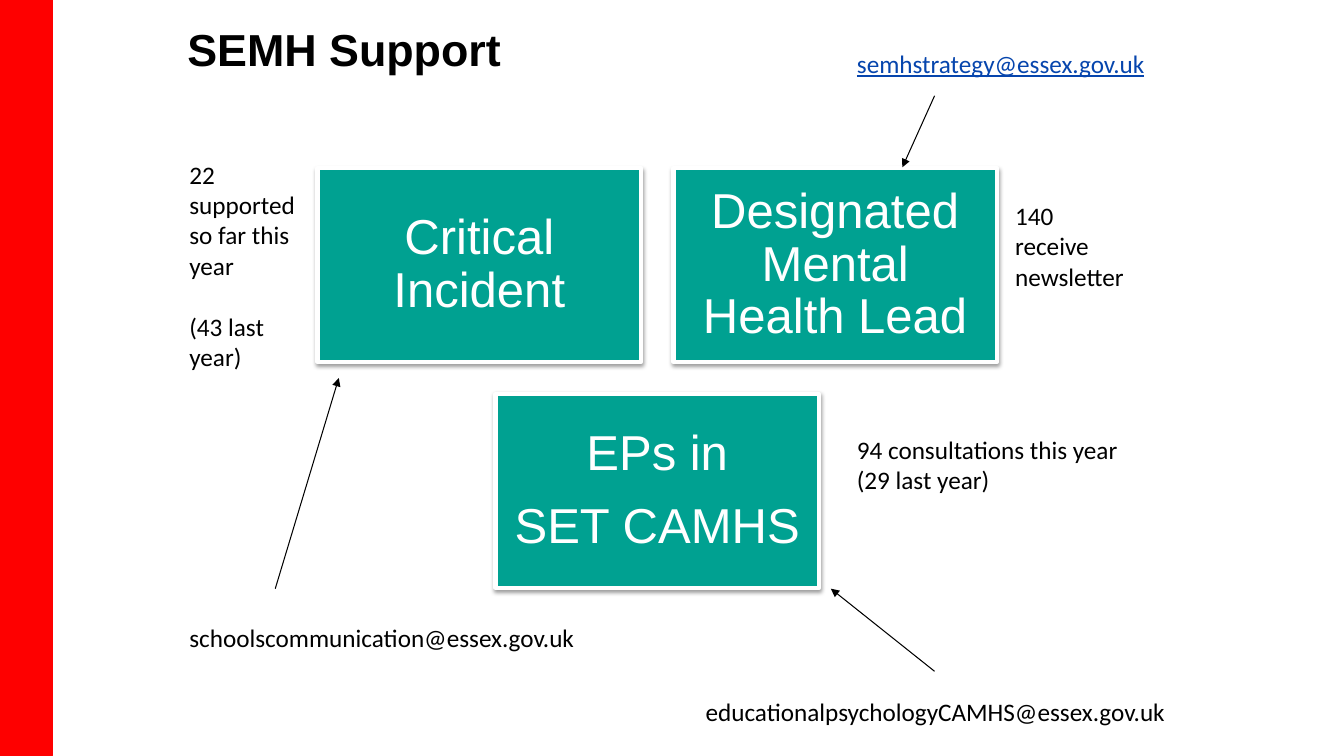
"""Build the SEMH Support slide: three service cards with contacts and figures."""
from dataclasses import dataclass

from lxml.etree import SubElement
from pptx import Presentation
from pptx.dml.color import RGBColor
from pptx.enum.shapes import MSO_CONNECTOR as Connector, MSO_SHAPE as Preset
from pptx.enum.text import MSO_ANCHOR as Anchor, PP_ALIGN as Align
from pptx.oxml.ns import qn
from pptx.util import Inches, Pt

BLACK = RGBColor(0x00, 0x00, 0x00)
WHITE = RGBColor(0xFF, 0xFF, 0xFF)
TEAL = RGBColor(0x00, 0xA1, 0x91)
RED = RGBColor(0xFE, 0x00, 0x00)
LINK_BLUE = RGBColor(0x06, 0x45, 0xAD)

WIDTH, HEIGHT = Inches(13.33), Inches(7.5)
CARD_LEFT, CARD_TOP = 23.63, 22.27
CARD_WIDTH, CARD_HEIGHT = 24.08, 25.6
COLUMN_PITCH, ROW_PITCH = 26.48, 29.87


@dataclass(frozen=True)
class Area:
    """A rectangle in percent of the slide's width and height."""
    left: float
    top: float
    width: float
    height: float

    def lengths(self) -> tuple:
        """Return left, top, width and height as slide lengths."""
        return across(self.left), down(self.top), across(self.width), down(self.height)


@dataclass(frozen=True)
class Card:
    """A service card placed by grid column and row."""
    column: float
    row: int
    lines: tuple


@dataclass(frozen=True)
class Label:
    """A text box, one paragraph per line."""
    area: Area
    lines: tuple
    font: str = "Calibri"
    size: int = 18
    color: RGBColor = BLACK
    bold: bool = False
    underline: bool = False
    anchor: Anchor = Anchor.TOP


@dataclass(frozen=True)
class Arrow:
    """An arrow between two points in percent of the slide."""
    start: tuple
    end: tuple


CARDS = (
    Card(0, 0, ("Critical Incident",)),
    Card(1, 0, ("Designated Mental Health Lead",)),
    Card(0.5, 1, ("EPs in", "SET CAMHS")),
)
LABELS = (
    Label(Area(13.2, 1.73, 67.44, 9.47), ("SEMH Support",), "Arial", 32,
          bold=True, anchor=Anchor.MIDDLE),
    Label(Area(51.76, 91.47, 41.34, 5.33), ("educationalpsychologyCAMHS@essex.gov.uk",)),
    Label(Area(13.35, 81.6, 32.78, 5.33), ("schoolscommunication@essex.gov.uk",)),
    Label(Area(63.02, 5.73, 41.34, 5.33), ("semhstrategy@essex.gov.uk",),
          color=LINK_BLUE, underline=True),
    Label(Area(13.35, 20.4, 10.05, 29.6),
          ("22 supported so far this year", "(43 last year)")),
    Label(Area(63.02, 56.8, 21.91, 21.6), ("94 consultations this year (29 last year)",)),
    Label(Area(74.79, 25.87, 10.05, 13.47), ("140 receive newsletter",)),
)
ARROWS = (
    Arrow((20.48, 77.87), (25.21, 50)),
    Arrow((69.54, 88.8), (61.82, 77.87)),
    Arrow((69.54, 12.67), (67.14, 22.13)),
)


def across(share: float) -> int:
    """Turn a percentage of the slide's width into a length."""
    return round(WIDTH * share / 100)


def down(share: float) -> int:
    """Turn a percentage of the slide's height into a length."""
    return round(HEIGHT * share / 100)


def add_paragraph(frame, index: int, text: str, font: str, size: int, color: RGBColor):
    """Write one paragraph with a single run and return both."""
    paragraph = frame.add_paragraph() if index else frame.paragraphs[0]
    run = paragraph.add_run()
    run.text = text
    run.font.name, run.font.size = font, Pt(size)
    run.font.color.rgb = color
    return paragraph, run


def add_rectangle(slide, area: Area, fill: RGBColor, line: RGBColor, weight: float):
    """Draw a plain rectangle."""
    shape = slide.shapes.add_shape(Preset.RECTANGLE, *area.lengths())
    shape.shadow.inherit = False
    shape.fill.solid()
    shape.fill.fore_color.rgb = fill
    shape.line.color.rgb = line
    shape.line.width = Pt(weight)
    return shape


def add_card(slide, card: Card) -> None:
    """Draw a service card with its soft shadow."""
    area = Area(CARD_LEFT + card.column * COLUMN_PITCH, CARD_TOP + card.row * ROW_PITCH,
                CARD_WIDTH, CARD_HEIGHT)
    shape = add_rectangle(slide, area, TEAL, WHITE, 3)
    effects = shape._element.spPr.find(qn("a:effectLst"))
    shadow = SubElement(effects, qn("a:outerShdw"), blurRad=str(Pt(3.1)),
                        dist=str(Pt(1.6)), dir="5400000", rotWithShape="0")
    color = SubElement(shadow, qn("a:srgbClr"), val=str(BLACK))
    SubElement(color, qn("a:alpha"), val="38000")
    frame = shape.text_frame
    frame.word_wrap = True
    frame.vertical_anchor = Anchor.MIDDLE
    frame.margin_left = frame.margin_right = Inches(0.15)
    frame.margin_top = frame.margin_bottom = Inches(0.15)
    for index, text in enumerate(card.lines):
        paragraph, _ = add_paragraph(frame, index, text, "Arial", 35, WHITE)
        paragraph.alignment = Align.CENTER
        paragraph.line_spacing = 0.9
        paragraph.space_after = Pt(14)


def add_label(slide, label: Label) -> None:
    """Write a text box."""
    frame = slide.shapes.add_textbox(*label.area.lengths()).text_frame
    frame.word_wrap = True
    frame.vertical_anchor = label.anchor
    for index, text in enumerate(label.lines):
        paragraph, run = add_paragraph(frame, index, text, label.font, label.size, label.color)
        run.font.bold, run.font.underline = label.bold, label.underline
        if index:
            paragraph.space_before = Pt(22)


def add_arrow(slide, arrow: Arrow) -> None:
    """Draw a thin line with an arrowhead at its end."""
    connector = slide.shapes.add_connector(
        Connector.STRAIGHT, across(arrow.start[0]), down(arrow.start[1]),
        across(arrow.end[0]), down(arrow.end[1]))
    connector.line.color.rgb = BLACK
    connector.line.width = Pt(0.75)
    SubElement(connector.line._get_or_add_ln(), qn("a:tailEnd"), type="triangle")
    SubElement(connector._element.spPr, qn("a:effectLst"))


def main() -> None:
    """Build and save the slide."""
    presentation = Presentation()
    presentation.slide_width, presentation.slide_height = WIDTH, HEIGHT
    slide = presentation.slides.add_slide(presentation.slide_layouts[6])
    for card in CARDS:
        add_card(slide, card)
    for label in LABELS:
        add_label(slide, label)
    for arrow in ARROWS:
        add_arrow(slide, arrow)
    add_rectangle(slide, Area(0, 0, 3.9, 100), RED, RED, 0.75)
    presentation.save("out.pptx")


if __name__ == "__main__":
    main()
